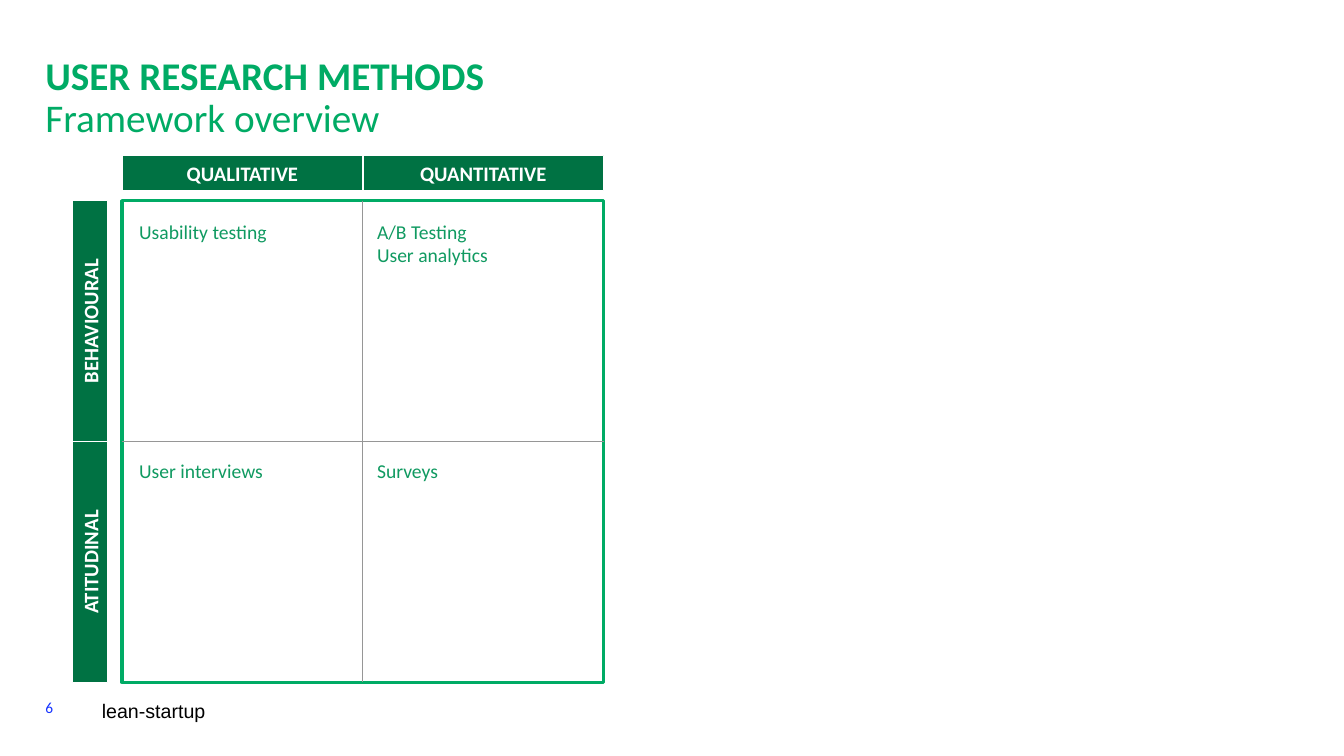
"""Build the user research methods framework slide."""
import pptx
import pptx.util
import pptx.dml.color
import pptx.enum.shapes
import pptx.enum.text
import pptx.oxml.ns
import lxml.etree

Pt = pptx.util.Pt
RGB = pptx.dml.color.RGBColor
Align = pptx.enum.text.PP_ALIGN
Anchor = pptx.enum.text.MSO_ANCHOR

GREEN = RGB(0x00, 0xAB, 0x65)
DARK = RGB(0x00, 0x72, 0x43)
LEAF = RGB(0x10, 0x9A, 0x61)
GREY = RGB(0x96, 0x96, 0x96)
BLUE = RGB(0x14, 0x32, 0xFF)
WHITE = RGB(0xFF, 0xFF, 0xFF)
BLACK = RGB(0x00, 0x00, 0x00)

LEFT, TOP, HALF = 87.1, 143.3, 172.1
BAND = 25.2


class Deck:
    def __init__(self, slide, font="Calibri"):
        self.slide = slide
        self.font = font

    def run(self, para, text, size, color, bold=False, font=None):
        run = para.add_run()
        run.text = text
        run.font.name = font or self.font
        run.font.size = Pt(size)
        run.font.bold = bold
        run.font.color.rgb = color

    def frame(self, shape, side=0, end=0, anchor=Anchor.TOP):
        frame = shape.text_frame
        frame.word_wrap = True
        frame.auto_size = pptx.enum.text.MSO_AUTO_SIZE.NONE
        frame.vertical_anchor = anchor
        frame.margin_left = frame.margin_right = Pt(side)
        frame.margin_top = frame.margin_bottom = Pt(end)
        return frame

    def title(self, x, y, w, h, head, sub):
        shape = self.slide.shapes.title
        shape.left, shape.top, shape.width, shape.height = map(Pt, (x, y, w, h))
        para = self.frame(shape).paragraphs[0]
        para.alignment = Align.LEFT
        para.line_spacing = 0.9
        self.run(para, head, 28, GREEN, bold=True)
        para.add_line_break()
        self.run(para, sub, 28, GREEN)

    def text(self, x, y, w, h, lines, size, color, font=None):
        box = self.slide.shapes.add_textbox(*map(Pt, (x, y, w, h)))
        frame = self.frame(box)
        for i, line in enumerate(lines):
            para = frame.add_paragraph() if i else frame.paragraphs[0]
            self.run(para, line, size, color, font=font)

    def rect(self, x, y, w, h, line, width, fill=None):
        kind = pptx.enum.shapes.MSO_SHAPE.RECTANGLE
        shape = self.slide.shapes.add_shape(kind, *map(Pt, (x, y, w, h)))
        shape.shadow.inherit = False
        shape.line.color.rgb = line
        shape.line.width = Pt(width)
        if fill is None:
            shape.fill.background()
        else:
            shape.fill.solid()
            shape.fill.fore_color.rgb = fill
        return shape

    def band(self, mid_x, mid_y, label, turn=0):
        shape = self.rect(mid_x - HALF / 2, mid_y - BAND / 2, HALF, BAND, WHITE, 1, DARK)
        shape.rotation = turn
        para = self.frame(shape, 9.4, 5, Anchor.MIDDLE).paragraphs[0]
        para.alignment = Align.CENTER
        self.run(para, label, 14.7, WHITE, bold=True)

    def split(self, shape, start, end):
        kind = pptx.enum.shapes.MSO_CONNECTOR.STRAIGHT
        line = self.slide.shapes.add_connector(kind, 0, 0, 0, 0)
        line.begin_connect(shape, start)
        line.end_connect(shape, end)
        line.line.color.rgb = GREY
        line.line.width = Pt(0.75)
        tag = pptx.oxml.ns.qn("a:effectLst")
        lxml.etree.SubElement(line._element.spPr, tag)


def main():
    prs = pptx.Presentation()
    prs.slide_width, prs.slide_height = Pt(960), Pt(540)
    deck = Deck(prs.slides.add_slide(prs.slide_layouts[5]))

    deck.title(32.4, 40.3, 435.6, 61.2, "USER RESEARCH METHODS", "Framework overview")

    grid = deck.rect(LEFT, TOP, 2 * HALF, 2 * HALF, GREEN, 2.25)
    deck.split(grid, 0, 2)
    deck.split(grid, 1, 3)

    for i, label in enumerate(("QUALITATIVE", "QUANTITATIVE")):
        deck.band(LEFT + (i + 0.5) * HALF, 123.5, label)
    for i, label in enumerate(("BEHAVIOURAL", "ATITUDINAL")):
        deck.band(64.4, TOP + (i + 0.5) * HALF, label, 270)

    cells = (
        (["Usability testing"], ["A/B Testing", "User analytics"]),
        (["User interviews"], ["Surveys"]),
    )
    for row, pair in enumerate(cells):
        for col, lines in enumerate(pair):
            deck.text(99.4 + col * 169.9, 157 + row * 170.6, 147.6, 143.3, lines, 14, LEAF)

    deck.text(32.4, 499, 39.6, 21.6, ["6"], 11, BLUE)
    deck.text(72.7, 499, 285.8, 21.6, ["lean-startup"], 14, BLACK, "Arial")

    prs.save("out.pptx")


if __name__ == "__main__":
    main()
